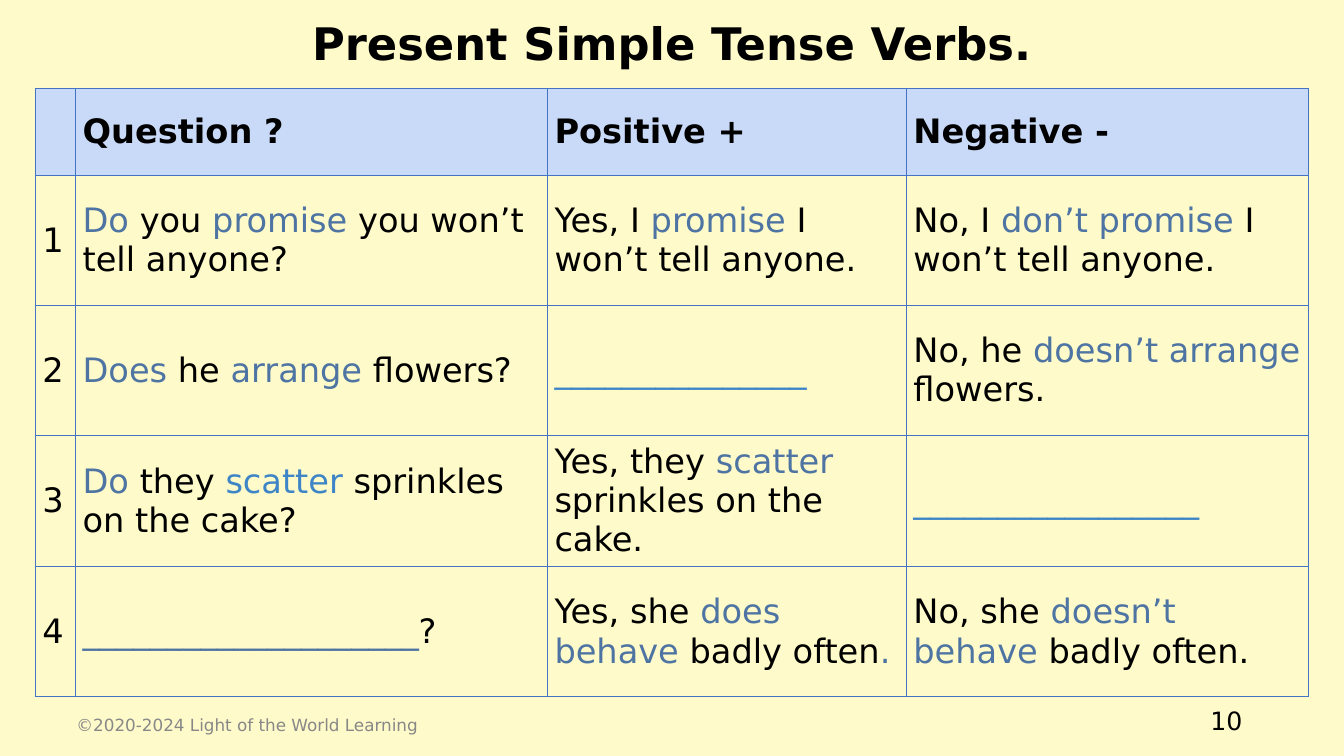
from lxml.etree import SubElement
from pptx import Presentation
from pptx.dml.color import RGBColor
from pptx.enum.text import MSO_ANCHOR, PP_ALIGN
from pptx.oxml.ns import qn
from pptx.util import Inches, Pt

FONT = "DejaVu Sans"
CREAM = RGBColor(0xFE, 0xFA, 0xC9)
HEADER = RGBColor(0xC9, 0xDA, 0xF8)
BORDER = RGBColor(0x44, 0x72, 0xC4)
BLACK = RGBColor(0, 0, 0)
VERB = RGBColor(0x4E, 0x74, 0xA3)
BLUE = RGBColor(0x3D, 0x85, 0xC6)
GRAY = RGBColor(0x88, 0x88, 0x88)

COLUMNS = [0.4, 4.68, 3.56, 3.99]
ROWS = [0.86] + [1.29] * 4
HEADINGS = ["", "Question ?", "Positive +", "Negative -"]
SENTENCES = [
    [
        [("Do ", VERB), ("you ", BLACK), ("promise ", VERB), ("you won’t tell anyone?", BLACK)],
        [("Yes, I ", BLACK), ("promise ", VERB), ("I won’t tell anyone.", BLACK)],
        [("No, I ", BLACK), ("don’t promise ", VERB), ("I won’t tell anyone.", BLACK)],
    ],
    [
        [("Does ", VERB), ("he", BLACK), (" arrange ", VERB), ("flowers?", BLACK)],
        [("_" * 15, BLUE)],
        [("No, he", BLACK), (" doesn’t arrange ", VERB), ("flowers.", BLACK)],
    ],
    [
        [("Do ", VERB), ("they ", BLACK), ("scatter", BLUE), (" sprinkles on the cake?", BLACK)],
        [("Yes, they ", BLACK), ("scatter ", VERB), ("sprinkles on the cake.", BLACK)],
        [("_" * 17, BLUE)],
    ],
    [
        [("_" * 20, VERB), ("?", BLACK)],
        [("Yes, she", BLACK), (" does behave ", VERB), ("badly often", BLACK), (".", VERB)],
        [("No, she ", BLACK), ("doesn’t behave ", VERB), ("badly often.", BLACK)],
    ],
]


def add_runs(p, parts, size, bold=False):
    for text, color in parts:
        r = p.add_run()
        r.text = text
        r.font.name = FONT
        r.font.size = Pt(size)
        r.font.bold = bold
        r.font.color.rgb = color


def add_label(s, box, text, size, color=BLACK, align=PP_ALIGN.LEFT, bold=False):
    tf = s.shapes.add_textbox(*map(Inches, box)).text_frame
    tf.word_wrap = True
    tf.vertical_anchor = MSO_ANCHOR.MIDDLE
    p = tf.paragraphs[0]
    p.alignment = align
    add_runs(p, [(text, color)], size, bold)


def set_borders(cell):
    tcPr = cell._tc.get_or_add_tcPr()
    for i, side in enumerate(("lnL", "lnR", "lnT", "lnB")):
        ln = SubElement(tcPr, qn(f"a:{side}"), w=str(Pt(1)))
        fill = SubElement(ln, qn("a:solidFill"))
        SubElement(fill, qn("a:srgbClr"), val=str(BORDER))
        tcPr.remove(ln)
        tcPr.insert(i, ln)


def fill_cell(cell, parts, heading):
    cell.vertical_anchor = MSO_ANCHOR.MIDDLE
    cell.margin_left = cell.margin_right = Inches(0.07)
    cell.margin_top = cell.margin_bottom = Inches(0.07)
    if heading:
        cell.fill.solid()
        cell.fill.fore_color.rgb = HEADER
    else:
        cell.fill.background()
    set_borders(cell)
    add_runs(cell.text_frame.paragraphs[0], parts, 24, heading)


def add_verb_table(s, left, top):
    size = map(Inches, (left, top, sum(COLUMNS), sum(ROWS)))
    table = s.shapes.add_table(len(ROWS), len(COLUMNS), *size).table
    table.horz_banding = False
    for column, width in zip(table.columns, COLUMNS):
        column.width = Inches(width)
    for row, height in zip(table.rows, ROWS):
        row.height = Inches(height)
    content = [[[(text, BLACK)] if text else [] for text in HEADINGS]]
    for number, sentences in enumerate(SENTENCES, 1):
        content.append([[(str(number), BLACK)], *sentences])
    for i, row in enumerate(content):
        for j, parts in enumerate(row):
            fill_cell(table.cell(i, j), parts, heading=i == 0)


def add_footer(s):
    add_label(s, (9.42, 6.95, 3, 0.4), "10", 18, align=PP_ALIGN.RIGHT)
    add_label(s, (0.66, 6.99, 4.5, 0.4), "©2020-2024 Light of the World Learning", 12, GRAY)


def main():
    prs = Presentation()
    prs.slide_width = Inches(13.33)
    prs.slide_height = Inches(7.5)
    s = prs.slides.add_slide(prs.slide_layouts[6])
    s.background.fill.solid()
    s.background.fill.fore_color.rgb = CREAM
    add_verb_table(s, 0.35, 0.88)
    add_label(s, (0.82, 0, 11.69, 0.84), "Present Simple Tense Verbs.", 32,
              align=PP_ALIGN.CENTER, bold=True)
    add_footer(s)
    prs.save("out.pptx")


if __name__ == "__main__":
    main()
